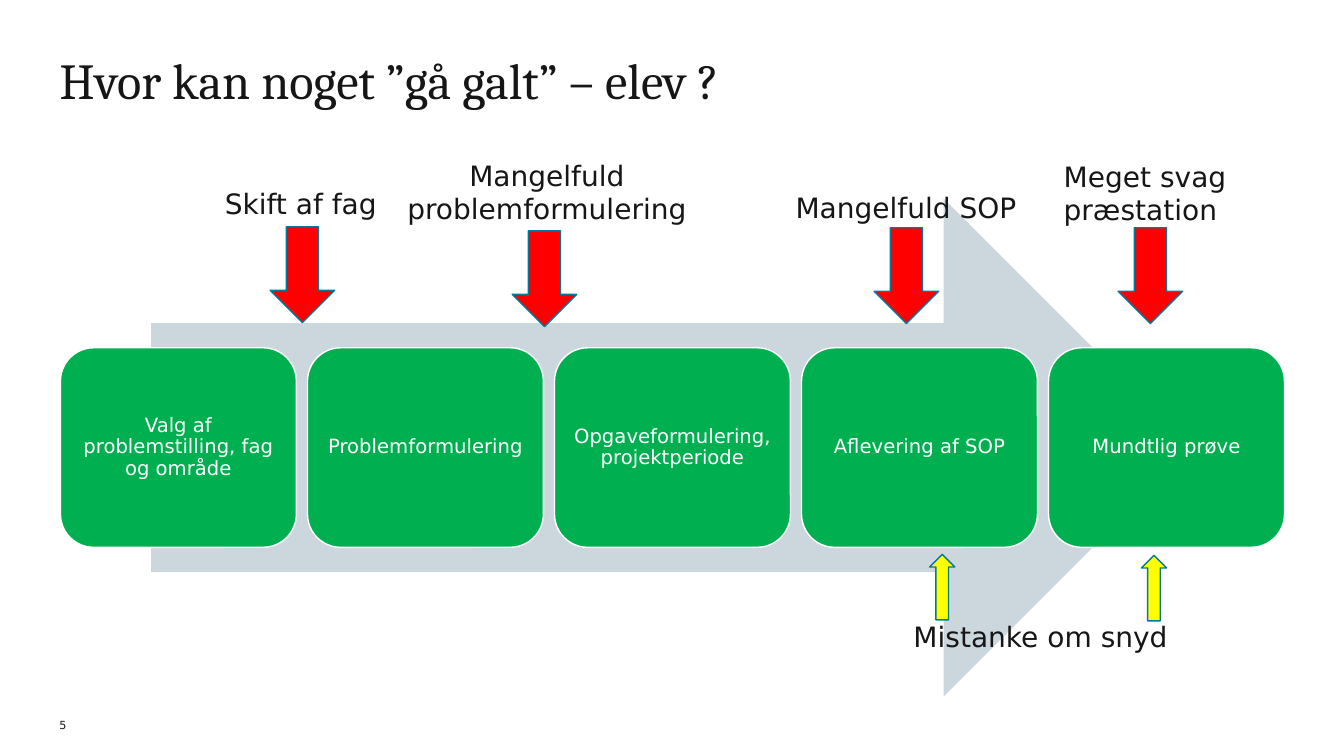
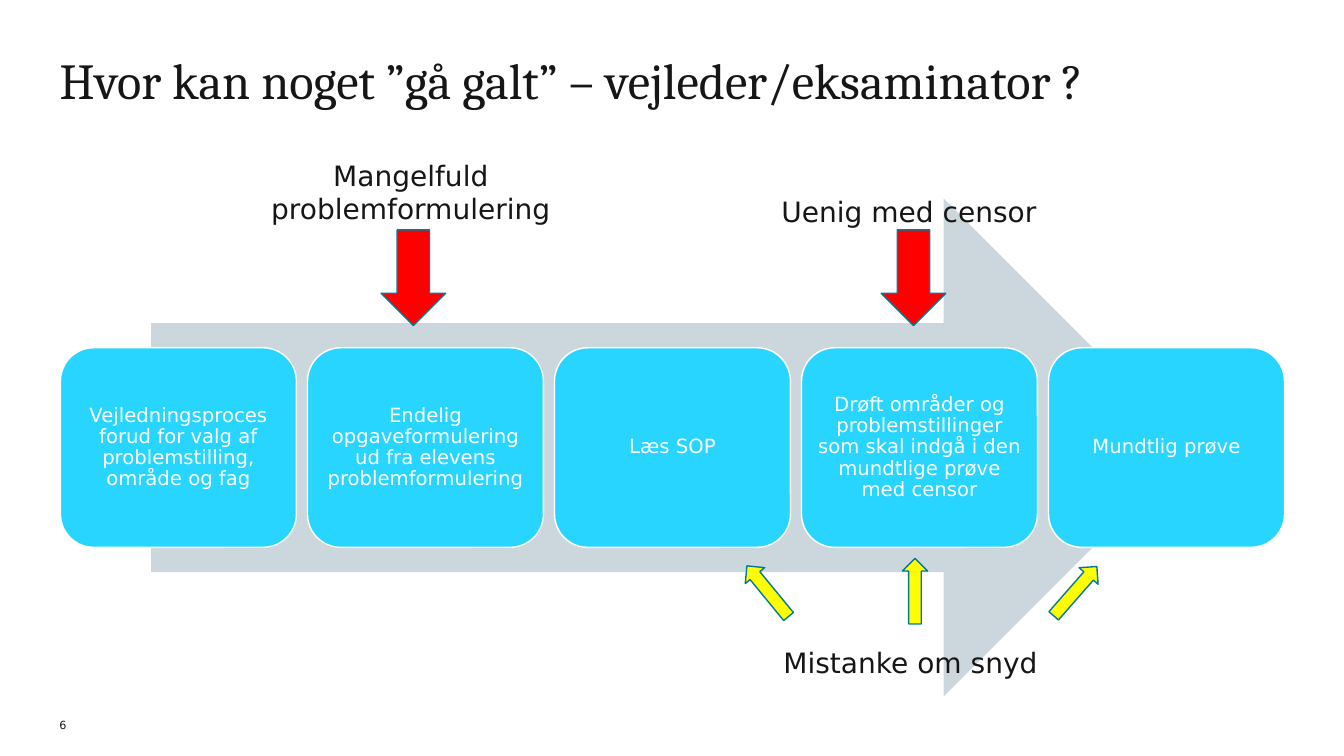
from dataclasses import dataclass
from typing import NamedTuple

from pptx import Presentation
from pptx import util as u
from pptx.dml.color import RGBColor
from pptx.enum import shapes, text
from pptx.shapes.autoshape import Shape
from pptx.slide import Slide
from pptx.text.text import TextFrame

PX = 9144  # EMU per px, 100 px to the inch


@dataclass(frozen=True)
class Theme:
    ink: str = "161616"
    white: str = "FFFFFF"
    band: str = "CCD7DD"
    pupil: str = "00B050"
    teacher: str = "28D5FF"
    problem: str = "FF0000"
    suspicion: str = "FFFF00"
    arrow_edge: str = "007A98"
    heading_font: str = "Cambria"
    body_font: str = "DejaVu Sans"
    title_size: int = 36
    label_size: int = 20
    step_size: int = 14
    number_size: int = 8


class Box(NamedTuple):
    left: int
    top: int
    width: int
    height: int

    def emu(self) -> list[u.Emu]:
        return [u.Emu(side * PX) for side in self]


class Label(NamedTuple):
    wording: str
    box: Box
    centred: bool = False


class Pointer(NamedTuple):
    left: int
    top: int
    rotation: float = 0


@dataclass(frozen=True)
class Process:
    number: int
    title: str
    title_width: int
    step_color: str
    steps: list[str]
    problems: list[Pointer]
    suspicions: list[Pointer]
    labels: list[Label]


THEME = Theme()
BAND = Box(150, 197, 1033, 494)
FIRST_STEP = Box(60, 345, 234, 198)
STEP_PITCH = 245
STEP_MARGIN = 6
PROBLEM_SIZE = (64, 95)
SUSPICION_SIZE = (25, 65)
NUMBER_BOX = Box(59, 706, 30, 20)
LINE, TWO_LINES = 34, 67

PROCESSES = [
    Process(
        5, "Hvor kan noget ”gå galt” – elev ?", 1013, THEME.pupil,
        steps=["Valg af problemstilling, fag og område", "Problemformulering",
               "Opgaveformulering, projektperiode", "Aflevering af SOP",
               "Mundtlig prøve"],
        problems=[Pointer(268, 225), Pointer(508, 229), Pointer(867, 226),
                  Pointer(1109, 226)],
        suspicions=[Pointer(922, 550), Pointer(1132, 551)],
        labels=[
            Label("Skift af fag", Box(223, 185, 156, LINE)),
            Label("Mangelfuld problemformulering",
                  Box(396, 157, 293, TWO_LINES), centred=True),
            Label("Mangelfuld SOP", Box(789, 189, 225, LINE)),
            Label("Meget svag præstation", Box(1055, 158, 192, TWO_LINES)),
            Label("Mistanke om snyd", Box(906, 615, 259, LINE)),
        ],
    ),
    Process(
        6, "Hvor kan noget ”gå galt” – vejleder/eksaminator ?", 1110, THEME.teacher,
        steps=["Vejledningsproces forud for valg af problemstilling, område og fag",
               "Endelig opgaveformulering ud fra elevens problemformulering",
               "Læs SOP",
               "Drøft områder og problemstillinger som skal indgå i den "
               "mundtlige prøve med censor",
               "Mundtlig prøve"],
        problems=[Pointer(378, 228), Pointer(874, 228)],
        suspicions=[Pointer(749, 554, 320.6), Pointer(895, 554),
                    Pointer(1054, 554, 41.2)],
        labels=[
            Label("Mangelfuld problemformulering",
                  Box(261, 157, 293, TWO_LINES), centred=True),
            Label("Uenig med censor", Box(775, 193, 260, LINE)),
            Label("Mistanke om snyd", Box(777, 640, 259, LINE)),
        ],
    ),
]


def write(frame: TextFrame, wording: str, size: int, *, font: str = THEME.body_font,
          color: str = THEME.ink, centred: bool = False, margin: int = 0,
          anchor: text.MSO_ANCHOR = text.MSO_ANCHOR.TOP, spacing: float = 1.0) -> None:
    frame_format = {"word_wrap": True, "auto_size": text.MSO_AUTO_SIZE.NONE,
                    "vertical_anchor": anchor}
    for side in ("left", "top", "right", "bottom"):
        frame_format[f"margin_{side}"] = u.Emu(margin * PX)
    for name, value in frame_format.items():
        setattr(frame, name, value)
    frame.text = wording
    paragraph = frame.paragraphs[0]
    paragraph.alignment = text.PP_ALIGN.CENTER if centred else text.PP_ALIGN.LEFT
    paragraph.line_spacing = spacing
    run_font = paragraph.runs[0].font
    for name, value in {"name": font, "size": u.Pt(size)}.items():
        setattr(run_font, name, value)
    run_font.color.rgb = RGBColor.from_string(color)


def add_filled(slide: Slide, kind: shapes.MSO_SHAPE, box: Box, fill: str,
               edge: str | None = None) -> Shape:
    """Add a preset shape; without an edge colour it has no outline."""
    shape = slide.shapes.add_shape(kind, *box.emu())
    shape.shadow.inherit = False
    shape.fill.solid()
    shape.fill.fore_color.rgb = RGBColor.from_string(fill)
    if edge:
        shape.line.color.rgb = RGBColor.from_string(edge)
        shape.line.width = u.Pt(1)
    else:
        shape.line.fill.background()
    return shape


def add_title(slide: Slide, process: Process) -> None:
    title = slide.shapes.title
    box = Box(59, 59, process.title_width, 102)
    for name, value in zip(("left", "top", "width", "height"), box.emu()):
        setattr(title, name, value)
    write(title.text_frame, process.title, THEME.title_size,
          font=THEME.heading_font, spacing=0.83)


def add_steps(slide: Slide, process: Process) -> None:
    add_filled(slide, shapes.MSO_SHAPE.RIGHT_ARROW, BAND, THEME.band)
    for index, wording in enumerate(process.steps):
        box = FIRST_STEP._replace(left=FIRST_STEP.left + index * STEP_PITCH)
        step = add_filled(slide, shapes.MSO_SHAPE.ROUNDED_RECTANGLE, box,
                          process.step_color, THEME.white)
        write(step.text_frame, wording, THEME.step_size, color=THEME.white,
              centred=True, margin=STEP_MARGIN, anchor=text.MSO_ANCHOR.MIDDLE,
              spacing=0.9)


def add_pointers(slide: Slide, pointers: list[Pointer], kind: shapes.MSO_SHAPE,
                 size: tuple[int, int], fill: str) -> None:
    for pointer in pointers:
        arrow = add_filled(slide, kind, Box(pointer.left, pointer.top, *size),
                           fill, THEME.arrow_edge)
        arrow.rotation = pointer.rotation


def add_label(slide: Slide, label: Label) -> None:
    caption = slide.shapes.add_textbox(*label.box.emu())
    write(caption.text_frame, label.wording, THEME.label_size, centred=label.centred)


def add_number(slide: Slide, number: int) -> None:
    footer = slide.shapes.add_textbox(*NUMBER_BOX.emu())
    write(footer.text_frame, str(number), THEME.number_size,
          anchor=text.MSO_ANCHOR.BOTTOM)


def build_slide(deck: Presentation, process: Process) -> None:
    title_only = deck.slide_layouts.get_by_name("Title Only")
    slide = deck.slides.add_slide(title_only)
    add_title(slide, process)
    add_steps(slide, process)
    add_number(slide, process.number)
    add_pointers(slide, process.problems, shapes.MSO_SHAPE.DOWN_ARROW,
                 PROBLEM_SIZE, THEME.problem)
    add_pointers(slide, process.suspicions, shapes.MSO_SHAPE.UP_ARROW,
                 SUSPICION_SIZE, THEME.suspicion)
    for label in process.labels:
        add_label(slide, label)


def main() -> None:
    deck = Presentation()
    deck.slide_width, deck.slide_height = u.Emu(1333 * PX), u.Emu(750 * PX)
    for process in PROCESSES:
        build_slide(deck, process)
    deck.save("out.pptx")


if __name__ == "__main__":
    main()
